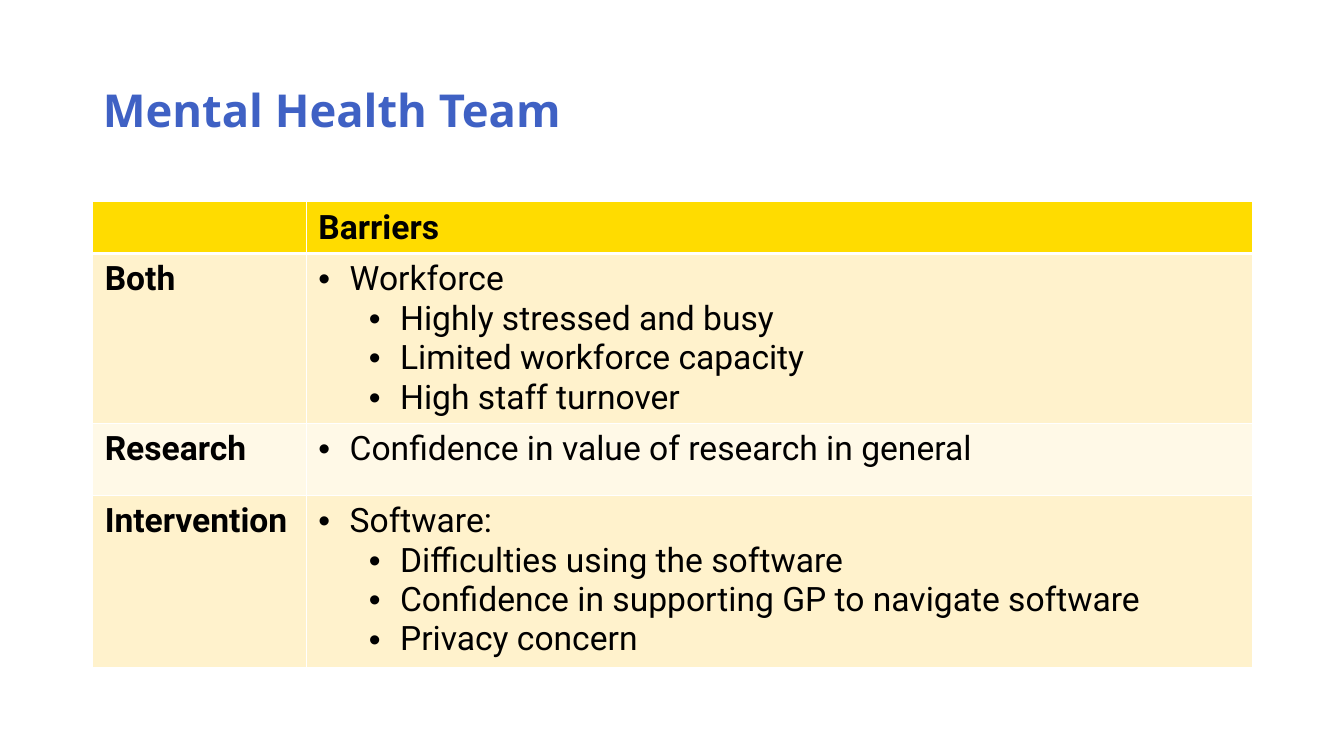
import dataclasses

import lxml.etree
import pptx
import pptx.dml.color
import pptx.enum.text
import pptx.oxml.ns
import pptx.util

SLIDE_W = pptx.util.Inches(13.33)
SLIDE_H = pptx.util.Inches(7.5)
LEFT, WIDTH = 0.069, 0.863
COLUMN_SHARES = (0.159, 0.704)
INDENT = pptx.util.Inches(0.31)
LEVEL_STEP = pptx.util.Inches(0.5)


@dataclasses.dataclass(frozen=True)
class Item:
    text: str
    level: int = 0


@dataclasses.dataclass(frozen=True)
class BarrierRow:
    label: str
    items: tuple[Item, ...]
    height: float
    fill: str


ROWS = (
    BarrierRow("Both", (
        Item("Workforce"),
        Item("Highly stressed and busy", 1),
        Item("Limited workforce capacity", 1),
        Item("High staff turnover", 1),
    ), 0.205, "FFF2CC"),
    BarrierRow("Research", (
        Item("Confidence in value of research in general"),
    ), 0.095, "FFF9E7"),
    BarrierRow("Intervention", (
        Item("Software:"),
        Item("Difficulties using the software", 1),
        Item("Confidence in supporting GP to navigate software", 1),
        Item("Privacy concern", 1),
    ), 0.228, "FFF2CC"),
)
HEADER_HEIGHT = 0.052


def across(share: float) -> int:
    return round(SLIDE_W * share)


def down(share: float) -> int:
    return round(SLIDE_H * share)


def rgb(value: str) -> pptx.dml.color.RGBColor:
    return pptx.dml.color.RGBColor.from_string(value)


def write(p, text: str, *, size: float = 24, font: str = "Roboto",
          color: str = "000000", bold: bool = False) -> None:
    r = p.add_run()
    r.text = text
    r.font.size = pptx.util.Pt(size)
    r.font.name = font
    r.font.bold = bold
    r.font.color.rgb = rgb(color)


def add_bullet(p, level: int) -> None:
    p.level = level
    pPr = p._p.get_or_add_pPr()
    pPr.set("marL", str(INDENT + level * LEVEL_STEP))
    pPr.set("indent", str(-INDENT))
    qn = pptx.oxml.ns.qn
    lxml.etree.SubElement(pPr, qn("a:buFont"), typeface="Arial")
    lxml.etree.SubElement(pPr, qn("a:buChar"), char="•")


def format_cell(cell, fill: str, bottom: float = 1) -> None:
    qn = pptx.oxml.ns.qn
    tcPr = cell._tc.get_or_add_tcPr()
    for side, width in (("L", 1), ("R", 1), ("T", 1), ("B", bottom)):
        ln = lxml.etree.SubElement(tcPr, qn(f"a:ln{side}"), w=str(pptx.util.Pt(width)))
        solid = lxml.etree.SubElement(ln, qn("a:solidFill"))
        lxml.etree.SubElement(solid, qn("a:srgbClr"), val="FFFFFF")
    cell.fill.solid()
    cell.fill.fore_color.rgb = rgb(fill)
    cell.margin_left = cell.margin_right = pptx.util.Inches(0.12)
    cell.margin_top = cell.margin_bottom = pptx.util.Inches(0.06)


def add_title(s, text: str) -> None:
    sp = s.shapes.title
    sp.left, sp.top = across(LEFT), down(0.053)
    sp.width, sp.height = across(WIDTH), down(0.193)
    tf = sp.text_frame
    tf.word_wrap = True
    tf.auto_size = pptx.enum.text.MSO_AUTO_SIZE.NONE
    tf.vertical_anchor = pptx.enum.text.MSO_ANCHOR.MIDDLE
    p = tf.paragraphs[0]
    p.alignment = pptx.enum.text.PP_ALIGN.LEFT
    p.line_spacing = 0.9
    write(p, text, size=32.4, font="Open Sans", color="3F61C4", bold=True)


def add_barriers(s, rows: tuple[BarrierRow, ...]) -> None:
    heights = (HEADER_HEIGHT, *(row.height for row in rows))
    table = s.shapes.add_table(
        len(heights), len(COLUMN_SHARES), across(LEFT), down(0.267),
        across(WIDTH), down(sum(heights))).table
    table.horz_banding = False
    for column, share in zip(table.columns, COLUMN_SHARES):
        column.width = across(share)
    for table_row, height in zip(table.rows, heights):
        table_row.height = down(height)

    for cell in table.rows[0].cells:
        format_cell(cell, "FFDC00", bottom=3)
    write(table.cell(0, 1).text_frame.paragraphs[0], "Barriers", bold=True)

    for i, row in enumerate(rows, start=1):
        label, barriers = table.rows[i].cells
        for cell in (label, barriers):
            format_cell(cell, row.fill)
        write(label.text_frame.paragraphs[0], row.label, bold=True)
        tf = barriers.text_frame
        for j, item in enumerate(row.items):
            p = tf.add_paragraph() if j else tf.paragraphs[0]
            add_bullet(p, item.level)
            write(p, item.text)


def main() -> None:
    prs = pptx.Presentation()
    prs.slide_width, prs.slide_height = SLIDE_W, SLIDE_H
    s = prs.slides.add_slide(prs.slide_layouts.get_by_name("Title Only"))
    add_title(s, "Mental Health Team")
    add_barriers(s, ROWS)
    prs.save("out.pptx")


if __name__ == "__main__":
    main()
